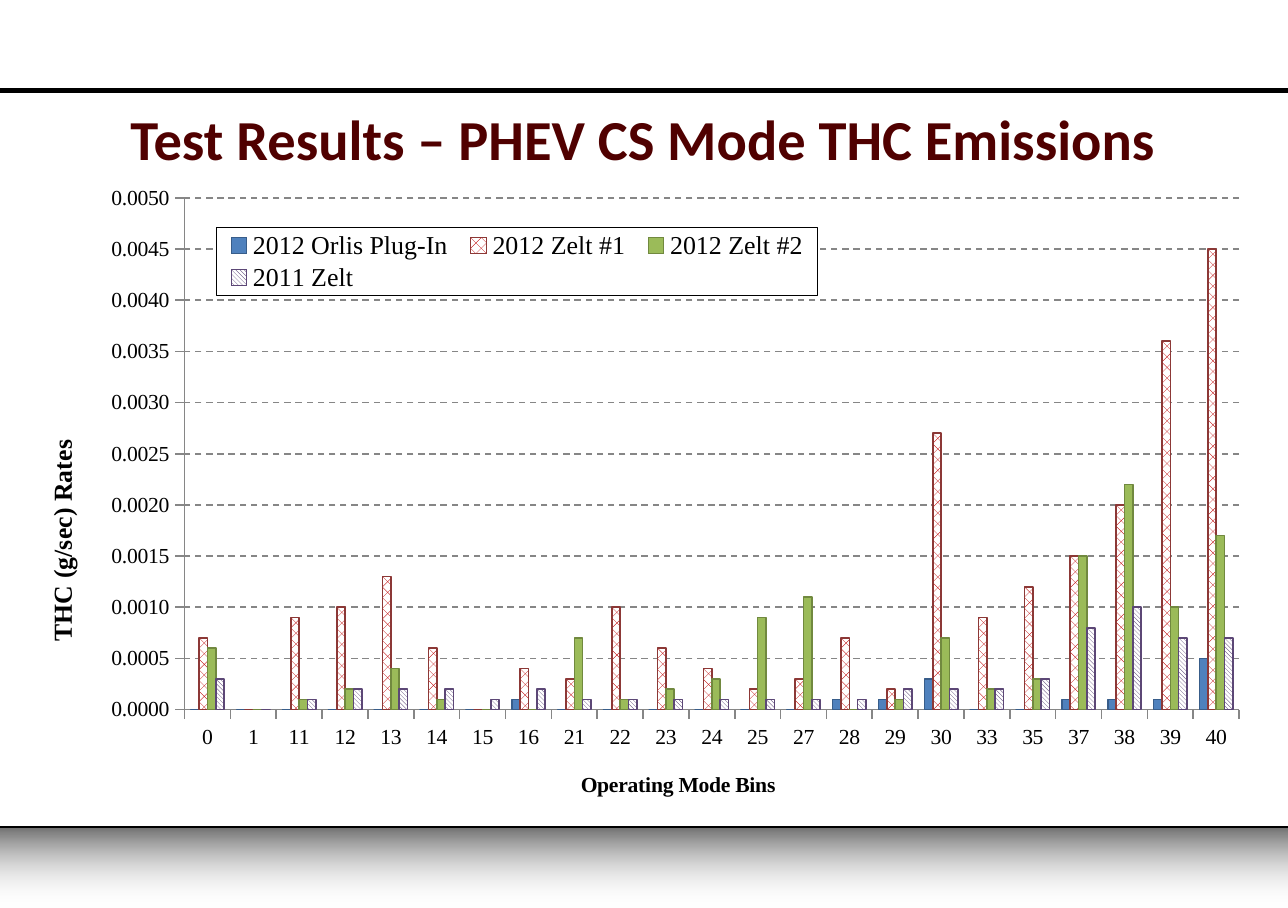
"""Builds the slide on PHEV charge-sustaining THC emissions by operating mode bin."""
import pptx
import pptx.chart.data
import pptx.dml.color
import pptx.enum.chart
import pptx.enum.dml
import pptx.enum.shapes
import pptx.enum.text
import pptx.oxml.ns
import pptx.oxml.xmlchemy
import pptx.util
from lxml import etree

Inches = pptx.util.Inches
Pt = pptx.util.Pt
qn = pptx.oxml.ns.qn
PATTERN = pptx.enum.dml.MSO_PATTERN

COLORS = {"black": "000000", "white": "FFFFFF", "maroon": "500000", "gray": "868686",
          "blue": "4F81BD", "blue edge": "385D8A", "red": "C00000", "red edge": "8C3836",
          "green": "9BBB59", "green edge": "71893F", "purple": "604A7B", "purple edge": "5C4776"}


def color(name):
    return pptx.dml.color.RGBColor.from_string(COLORS[name])


def place(element, index=0, **parts):
    layout = element.find(qn("c:layout"))
    if layout is None:
        layout = pptx.oxml.xmlchemy.OxmlElement("c:layout")
        element.insert(index, layout)
    manual = etree.SubElement(layout, qn("c:manualLayout"))
    for part, value in parts.items():
        etree.SubElement(manual, qn("c:" + part)).set("val", str(value))


deck = pptx.Presentation()
deck.slide_width, deck.slide_height = Inches(8.27), Inches(5.83)
slide = deck.slides.add_slide(deck.slide_layouts[6])

footer = slide.shapes.add_shape(pptx.enum.shapes.MSO_SHAPE.RECTANGLE,
                                Inches(0), Inches(5.31), Inches(8.39), Inches(0.52))
footer.shadow.inherit = False
footer.line.fill.background()
footer.fill.gradient()
footer.fill.gradient_angle = 90
for stop, name in zip(footer.fill.gradient_stops, ("white", "black")):
    stop.color.rgb = color(name)
for shade, alpha in zip(footer.fill._xPr.iter(qn("a:srgbClr")), ("0", "58000")):
    etree.SubElement(shade, qn("a:alpha")).set("val", alpha)

for height, weight in ((5.31, 1), (0.58, 2.25)):
    rule = slide.shapes.add_connector(pptx.enum.shapes.MSO_CONNECTOR.STRAIGHT,
                                      Inches(0), Inches(height), Inches(8.27), Inches(height))
    rule.line.width = Pt(weight)
    rule.line.color.rgb = color("black")
    etree.SubElement(rule._element.spPr, qn("a:effectLst"))

heading = slide.shapes.add_textbox(Inches(0.41), Inches(0.5), Inches(7.44), Inches(0.77)).text_frame
for attribute, value in {"word_wrap": True, "vertical_anchor": pptx.enum.text.MSO_ANCHOR.MIDDLE,
                         "margin_left": Inches(0.08), "margin_right": Inches(0.08),
                         "margin_top": Inches(0.04), "margin_bottom": Inches(0.04)}.items():
    setattr(heading, attribute, value)
heading.text = "Test Results – PHEV CS Mode THC Emissions"
heading.paragraphs[0].alignment = pptx.enum.text.PP_ALIGN.CENTER
heading_font = heading.paragraphs[0].runs[0].font
for attribute, value in {"name": "Calibri", "size": Pt(26.1), "bold": True}.items():
    setattr(heading_font, attribute, value)
heading_font.color.rgb = color("maroon")

bins = [0, 1, 11, 12, 13, 14, 15, 16, 21, 22, 23, 24, 25, 27, 28, 29, 30, 33, 35, 37, 38, 39, 40]
vehicles = [
    ("2012 Orlis Plug-In", "blue", None,
     [0, 0, 0, 0, 0, 0, 0, 0.0001, 0, 0, 0, 0, 0, 0, 0.0001, 0.0001, 0.0003, 0, 0,
      0.0001, 0.0001, 0.0001, 0.0005]),
    ("2012 Zelt #1", "red", PATTERN.PERCENT_50,
     [0.0007, 0, 0.0009, 0.001, 0.0013, 0.0006, 0, 0.0004, 0.0003, 0.001, 0.0006, 0.0004,
      0.0002, 0.0003, 0.0007, 0.0002, 0.0027, 0.0009, 0.0012, 0.0015, 0.002, 0.0036, 0.0045]),
    ("2012 Zelt #2", "green", None,
     [0.0006, 0, 0.0001, 0.0002, 0.0004, 0.0001, 0, 0, 0.0007, 0.0001, 0.0002, 0.0003,
      0.0009, 0.0011, 0, 0.0001, 0.0007, 0.0002, 0.0003, 0.0015, 0.0022, 0.001, 0.0017]),
    ("2011 Zelt", "purple", PATTERN.DARK_DOWNWARD_DIAGONAL,
     [0.0003, 0, 0.0001, 0.0002, 0.0002, 0.0002, 0.0001, 0.0002, 0.0001, 0.0001, 0.0001, 0.0001,
      0.0001, 0.0001, 0.0001, 0.0002, 0.0002, 0.0002, 0.0003, 0.0008, 0.001, 0.0007, 0.0007]),
]
rates = pptx.chart.data.CategoryChartData(number_format="0.0000")
rates.categories = [str(mode_bin) for mode_bin in bins]
for vehicle, _, _, values in vehicles:
    rates.add_series(vehicle, values)
emissions = slide.shapes.add_chart(pptx.enum.chart.XL_CHART_TYPE.COLUMN_CLUSTERED,
                                   Inches(0.14), Inches(1.16), Inches(7.92), Inches(4), rates).chart
emissions.has_title = False
emissions.font.name = "Times New Roman"
emissions.font.size = Pt(10)
emissions.font.color.rgb = color("black")
bars = emissions.plots[0]
for attribute, value in {"gap_width": 150, "overlap": 0, "vary_by_categories": False}.items():
    setattr(bars, attribute, value)
place(emissions._chartSpace.chart.plotArea, layoutTarget="inner", xMode="edge", yMode="edge",
      x=0.132, y=0.028, w=0.855, h=0.83)

for series, (_, hue, pattern, _) in zip(bars.series, vehicles):
    fill = series.format.fill
    if pattern is None:
        fill.solid()
        fill.fore_color.rgb = color(hue)
    else:
        fill.patterned()
        fill.pattern = pattern
        fill.fore_color.rgb = color(hue)
        fill.back_color.rgb = color("white")
    series.invert_if_negative = False
    series.format.line.width = Pt(0.75)
    series.format.line.color.rgb = color(hue + " edge")

rate_axis = emissions.value_axis
for attribute, value in {"minimum_scale": 0, "maximum_scale": 0.005, "major_unit": 0.0005,
                         "has_major_gridlines": True}.items():
    setattr(rate_axis, attribute, value)
rate_axis.tick_labels.number_format = "0.0000"
rate_axis.tick_labels.number_format_is_linked = False
rate_axis.major_gridlines.format.line.dash_style = pptx.enum.dml.MSO_LINE.DASH

for axis, caption, size, left, top in (
        (emissions.category_axis, "Operating Mode Bins", 10, 0.45, 0.95),
        (rate_axis, "THC (g/sec) Rates", 12, 0.016, 0.416)):
    axis.major_tick_mark = pptx.enum.chart.XL_TICK_MARK.OUTSIDE
    axis.axis_title.text_frame.text = caption
    caption_font = axis.axis_title.text_frame.paragraphs[0].runs[0].font
    for attribute, value in {"name": "Times New Roman", "size": Pt(size), "bold": True}.items():
        setattr(caption_font, attribute, value)
    caption_font.color.rgb = color("black")
    place(axis.axis_title._element, 1, xMode="edge", yMode="edge", x=left, y=top)
for line in (emissions.category_axis.format.line, rate_axis.format.line,
             rate_axis.major_gridlines.format.line):
    line.width = Pt(0.75)
    line.color.rgb = color("gray")

emissions.has_legend = True
legend = emissions.legend
legend.position = pptx.enum.chart.XL_LEGEND_POSITION.RIGHT
legend.include_in_layout = False
legend.font.name = "Times New Roman"
legend.font.size = Pt(12)
legend.font.color.rgb = color("black")
place(legend._element, 1, xMode="edge", yMode="edge", x=0.158, y=0.076, w=0.487, h=0.11)
frame = pptx.oxml.xmlchemy.OxmlElement("c:spPr")
legend._element.find(qn("c:txPr")).addprevious(frame)
box_fill = etree.SubElement(frame, qn("a:solidFill"))
box_line = etree.SubElement(frame, qn("a:ln"), w=str(Pt(0.75)))
line_fill = etree.SubElement(box_line, qn("a:solidFill"))
for paint, name in ((box_fill, "white"), (line_fill, "black")):
    etree.SubElement(paint, qn("a:srgbClr"), val=COLORS[name])

deck.save("out.pptx")
